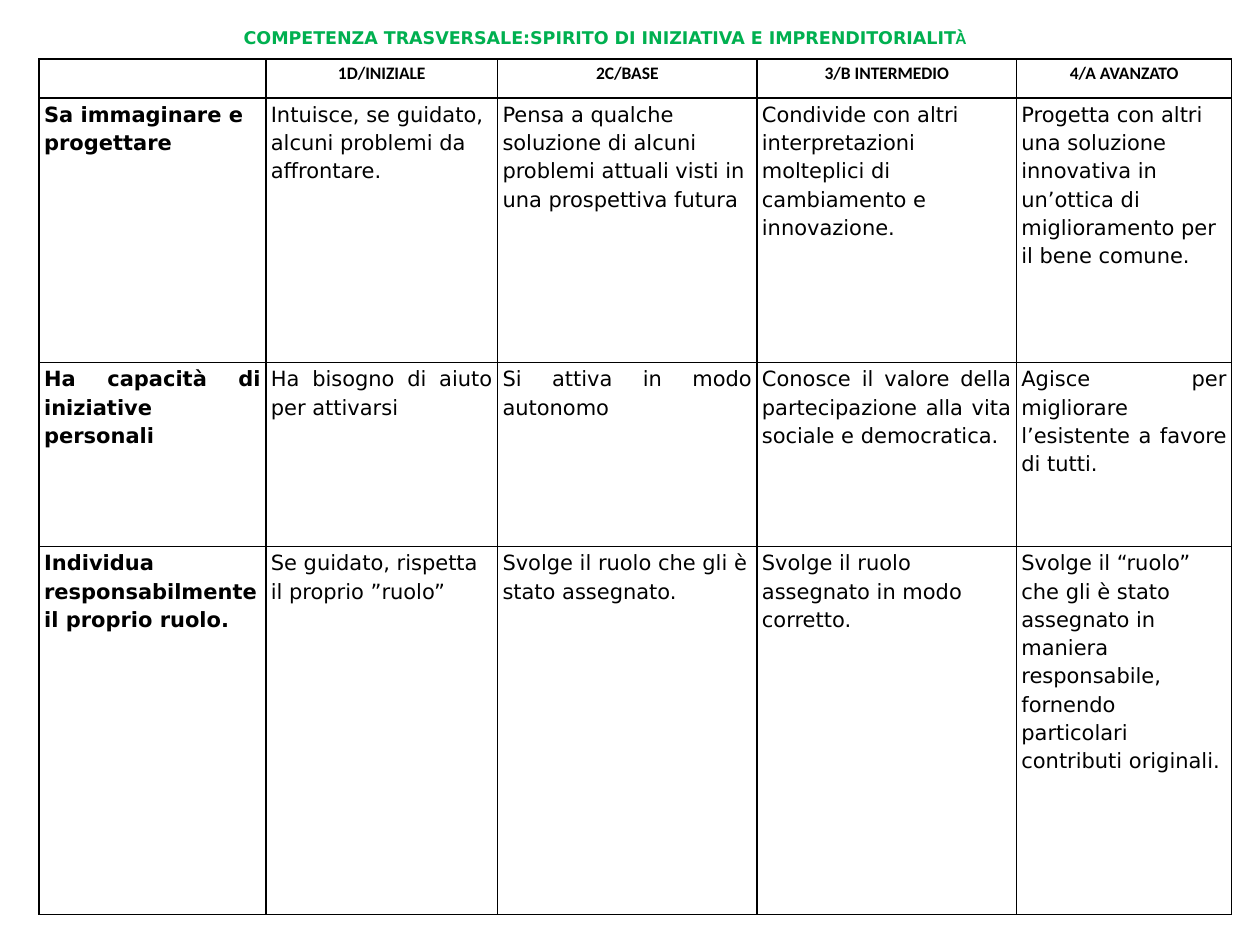
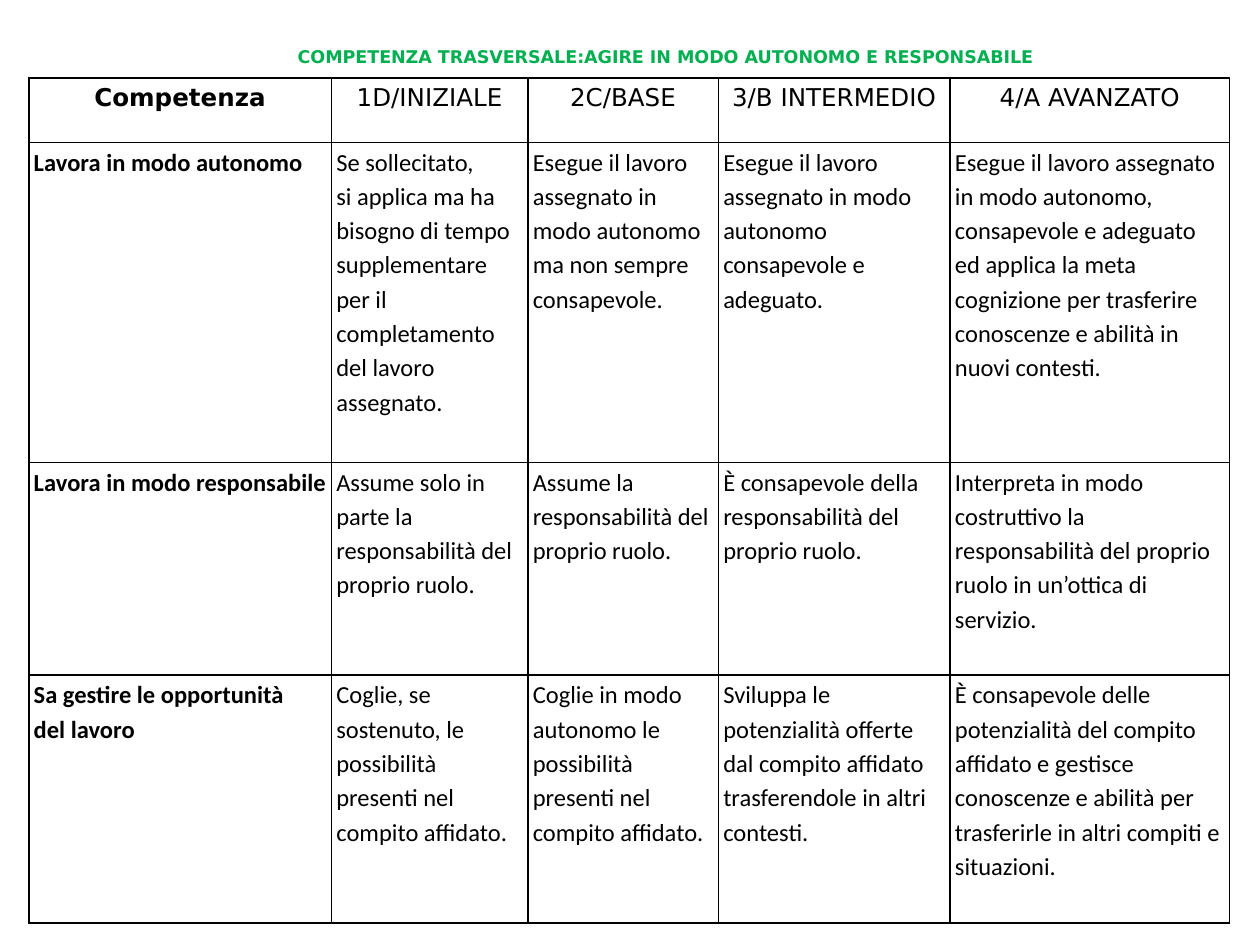
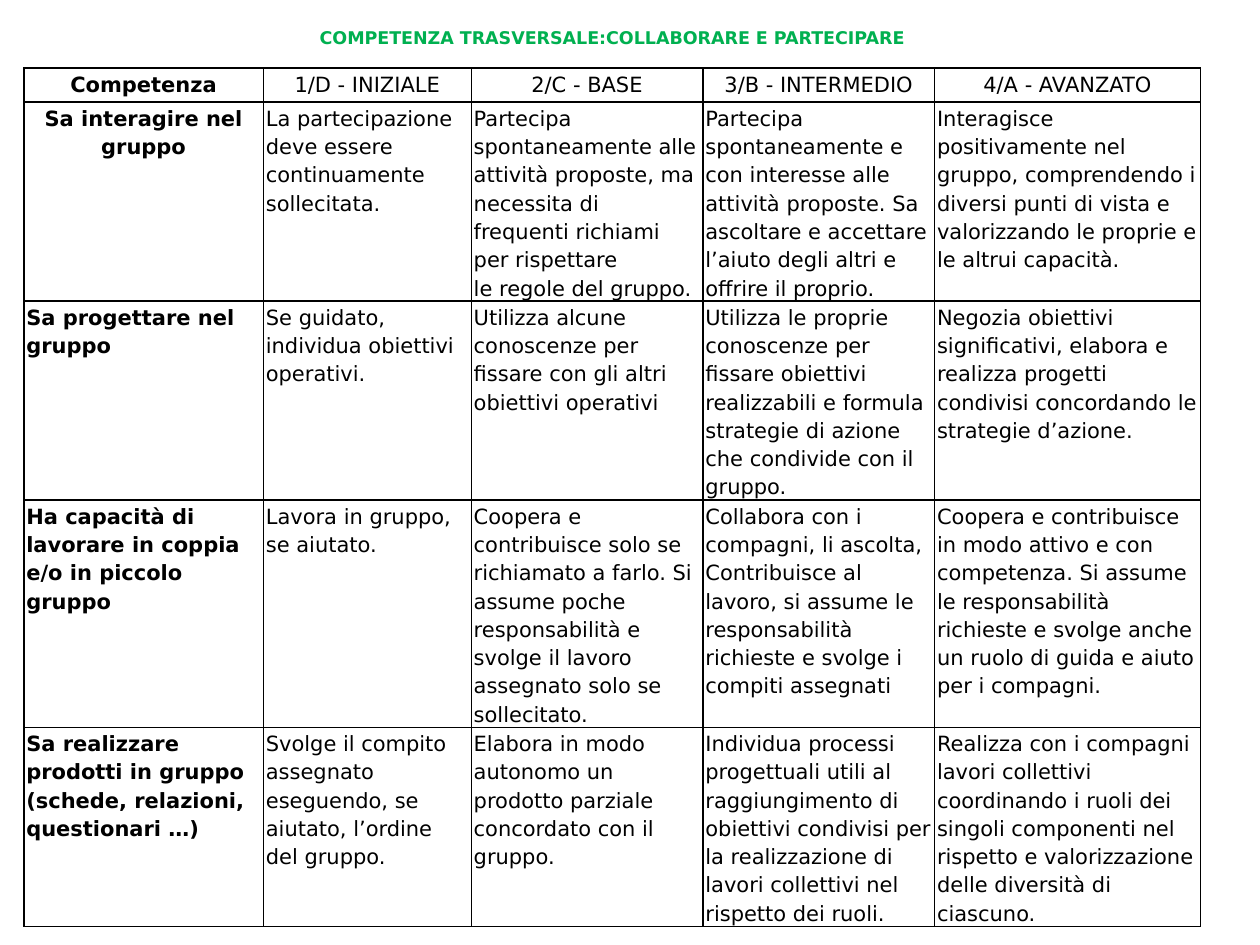
from dataclasses import dataclass, field

from lxml.etree import SubElement
from pptx import Presentation
from pptx.dml.color import RGBColor
from pptx.enum.text import MSO_ANCHOR, MSO_AUTO_SIZE, PP_ALIGN
from pptx.oxml import parse_xml
from pptx.oxml.ns import nsdecls, qn
from pptx.slide import Slide
from pptx.table import _Cell
from pptx.text.text import Font
from pptx.util import Cm, Pt

BLACK = "000000"
GREEN = "00B050"
SANS = "DejaVu Sans"
CALIBRI = "Calibri"
TITLE_PREFIX = "COMPETENZA TRASVERSALE:"
BORDER_SIDES = ("lnL", "lnR", "lnT", "lnB")
TITLE_ONLY = 5


@dataclass(frozen=True)
class TextStyle:
    name: str
    size: int
    bold: bool = False


TITLE_STYLE = TextStyle(SANS, 10, True)
TITLE_END_STYLE = TextStyle(CALIBRI, 10, True)


@dataclass(frozen=True)
class Rubric:
    """A competence grid; lengths are in centimetres, alignments keyed by (row, column)."""

    title: str
    title_box: tuple[float, float, float, float]
    corner: tuple[float, float]
    widths: tuple[float, ...]
    heights: tuple[float, ...]
    side_margin: float
    header: TextStyle
    body: TextStyle
    rows: tuple[tuple[str, ...], ...]
    title_end: str = ""
    alignments: dict[tuple[int, int], PP_ALIGN] = field(default_factory=dict)


INITIATIVE = Rubric(
    title="SPIRITO DI INIZIATIVA E IMPRENDITORIALIT",
    title_end="À",
    title_box=(1.78, 0.41, 20.83, 1.45),
    corner=(0.79, 1.19),
    widths=(4.57, 4.67, 5.23, 5.23, 4.34),
    heights=(0.79, 5.33, 3.71, 7.42),
    side_margin=0.1,
    header=TextStyle(CALIBRI, 10, True),
    body=TextStyle(SANS, 12),
    alignments={(2, column): PP_ALIGN.JUSTIFY for column in range(5)},
    rows=(
        ("", "1D/INIZIALE", "2C/BASE", "3/B INTERMEDIO", "4/A AVANZATO"),
        (
            "Sa immaginare e progettare",
            "Intuisce, se guidato, alcuni problemi da affrontare.",
            "Pensa a qualche soluzione di alcuni problemi attuali visti in una prospettiva futura",
            "Condivide con altri interpretazioni molteplici di cambiamento e innovazione.",
            "Progetta con altri una soluzione innovativa in un’ottica di miglioramento per il bene comune.",
        ),
        (
            "Ha capacità di iniziative personali",
            "Ha bisogno di aiuto per attivarsi",
            "Si attiva in modo autonomo",
            "Conosce il valore della partecipazione alla vita sociale e democratica.",
            "Agisce per migliorare l’esistente a favore di tutti.",
        ),
        (
            "Individua responsabilmente il proprio ruolo.",
            "Se guidato, rispetta il proprio ”ruolo”",
            "Svolge il ruolo che gli è stato assegnato.",
            "Svolge il ruolo assegnato in modo corretto.",
            "Svolge il “ruolo” che gli è stato assegnato in maniera responsabile, "
            "fornendo particolari contributi originali.",
        ),
    ),
)

AUTONOMY = Rubric(
    title="AGIRE IN MODO AUTONOMO E RESPONSABILE",
    title_box=(5.56, 0.79, 15.7, 0.69),
    corner=(0.58, 1.57),
    widths=(6.1, 3.96, 3.84, 4.67, 5.64),
    heights=(1.3, 6.45, 4.29, 5.0),
    side_margin=0.1,
    header=TextStyle(SANS, 14),
    body=TextStyle(CALIBRI, 14),
    rows=(
        ("Competenza", "1D/INIZIALE", "2C/BASE", "3/B INTERMEDIO", "4/A AVANZATO"),
        (
            "Lavora in modo autonomo",
            "Se sollecitato,\nsi applica ma ha bisogno di tempo supplementare "
            "per il completamento del lavoro assegnato.",
            "Esegue il lavoro assegnato in modo autonomo ma non sempre consapevole.",
            "Esegue il lavoro assegnato in modo autonomo consapevole e adeguato.",
            "Esegue il lavoro assegnato in modo autonomo, consapevole e adeguato ed applica "
            "la meta cognizione per trasferire conoscenze e abilità in nuovi contesti.",
        ),
        (
            "Lavora in modo responsabile",
            "Assume solo in parte la responsabilità del proprio ruolo.",
            "Assume la responsabilità del proprio ruolo.",
            "È consapevole della responsabilità del proprio ruolo.",
            "Interpreta in modo costruttivo la responsabilità del proprio ruolo in un’ottica di servizio.",
        ),
        (
            "Sa gestire le opportunità\ndel lavoro",
            "Coglie, se sostenuto, le possibilità presenti nel compito affidato.",
            "Coglie in modo autonomo le possibilità presenti nel compito affidato.",
            "Sviluppa le potenzialità offerte dal compito affidato\ntrasferendole in altri contesti.",
            "È consapevole delle potenzialità del compito affidato e gestisce conoscenze "
            "e abilità per trasferirle in altri compiti e situazioni.",
        ),
    ),
)

COLLABORATION = Rubric(
    title="COLLABORARE E PARTECIPARE",
    title_box=(2.77, 0.41, 19.13, 1.45),
    corner=(0.48, 1.37),
    widths=(4.83, 4.19, 4.67, 4.67, 5.36),
    heights=(0.69, 3.94, 3.94, 4.5, 3.99),
    side_margin=0.05,
    header=TextStyle(SANS, 12),
    body=TextStyle(SANS, 12),
    alignments={(1, 0): PP_ALIGN.CENTER},
    rows=(
        ("Competenza", "1/D - INIZIALE", "2/C - BASE", "3/B - INTERMEDIO", "4/A - AVANZATO"),
        (
            "Sa interagire nel gruppo",
            "La partecipazione deve essere continuamente sollecitata.",
            "Partecipa\nspontaneamente alle attività proposte, ma necessita di frequenti "
            "richiami per rispettare\nle regole del gruppo.",
            "Partecipa spontaneamente e con interesse alle attività proposte. "
            "Sa ascoltare e accettare l’aiuto degli altri e offrire il proprio.",
            "Interagisce positivamente nel gruppo, comprendendo i diversi punti di vista "
            "e valorizzando le proprie e le altrui capacità.",
        ),
        (
            "Sa progettare nel gruppo",
            "Se guidato,\nindividua obiettivi operativi.",
            "Utilizza alcune conoscenze per fissare con gli altri obiettivi operativi",
            "Utilizza le proprie conoscenze per fissare obiettivi realizzabili e formula "
            "strategie di azione che condivide con il gruppo.",
            "Negozia obiettivi significativi, elabora e realizza progetti condivisi "
            "concordando le strategie d’azione.",
        ),
        (
            "Ha capacità di lavorare in coppia e/o in piccolo gruppo",
            "Lavora in gruppo,\nse aiutato.",
            "Coopera e contribuisce solo se richiamato a farlo. Si assume poche responsabilità "
            "e svolge il lavoro assegnato solo se sollecitato.",
            "Collabora con i compagni, li ascolta, Contribuisce al lavoro, si assume "
            "le responsabilità richieste e svolge i compiti assegnati",
            "Coopera e contribuisce in modo attivo e con competenza. Si assume le responsabilità "
            "richieste e svolge anche un ruolo di guida e aiuto per i compagni.",
        ),
        (
            "Sa realizzare prodotti in gruppo (schede, relazioni, questionari …)",
            "Svolge il compito assegnato eseguendo, se aiutato, l’ordine del gruppo.",
            "Elabora in modo autonomo un prodotto parziale concordato con il gruppo.",
            "Individua processi progettuali utili al raggiungimento di obiettivi condivisi "
            "per la realizzazione di lavori collettivi nel rispetto dei ruoli.",
            "Realizza con i compagni lavori collettivi coordinando i ruoli dei singoli componenti "
            "nel rispetto e valorizzazione delle diversità di ciascuno.",
        ),
    ),
)


def style_font(font: Font, style: TextStyle, color: str, bold: bool) -> None:
    font.name = style.name
    font.size = Pt(style.size)
    font.bold = bold
    font.color.rgb = RGBColor.from_string(color)


def add_title(slide: Slide, rubric: Rubric) -> None:
    title = slide.shapes.title
    title.left, title.top, title.width, title.height = map(Cm, rubric.title_box)
    frame = title.text_frame
    frame.auto_size = MSO_AUTO_SIZE.NONE
    frame.vertical_anchor = MSO_ANCHOR.TOP
    frame.word_wrap = True
    frame.text = TITLE_PREFIX + rubric.title
    para = frame.paragraphs[0]
    para.alignment = PP_ALIGN.CENTER
    style_font(para.runs[0].font, TITLE_STYLE, GREEN, TITLE_STYLE.bold)
    if rubric.title_end:
        span = para.add_run()
        span.text = rubric.title_end
        style_font(span.font, TITLE_END_STYLE, GREEN, TITLE_END_STYLE.bold)


def frame_cell(cell: _Cell, side_margin: float) -> None:
    """Give the cell black borders, no fill and narrow margins."""
    cell.margin_left = cell.margin_right = Cm(side_margin)
    cell.margin_top, cell.margin_bottom = Cm(0.02), Cm(0)
    properties = cell._tc.get_or_add_tcPr()
    for side in BORDER_SIDES:
        properties.append(parse_xml(
            f'<a:{side} {nsdecls("a")} w="{Pt(1)}"><a:solidFill>'
            f'<a:srgbClr val="{BLACK}"/></a:solidFill></a:{side}>'
        ))
    cell.fill.background()


def write_cell(cell: _Cell, text: str, style: TextStyle, bold: bool, alignment: PP_ALIGN) -> None:
    cell.text_frame.text = text
    for para in cell.text_frame.paragraphs:
        para.alignment = alignment
        para.line_spacing = 1.15
        for span in para.runs:
            style_font(span.font, style, BLACK, bold)
        if not para.runs:
            SubElement(para._p, qn("a:endParaRPr"), sz=str(style.size * 100))


def add_grid(slide: Slide, rubric: Rubric) -> None:
    left, top = map(Cm, rubric.corner)
    table = slide.shapes.add_table(
        len(rubric.heights), len(rubric.widths), left, top,
        Cm(sum(rubric.widths)), Cm(sum(rubric.heights)),
    ).table
    table.first_row = table.horz_banding = False
    for column, width in zip(table.columns, rubric.widths):
        column.width = Cm(width)
    for row, height in zip(table.rows, rubric.heights):
        row.height = Cm(height)
    for row_index, texts in enumerate(rubric.rows):
        is_header = row_index == 0
        style = rubric.header if is_header else rubric.body
        default = PP_ALIGN.CENTER if is_header else PP_ALIGN.LEFT
        for column_index, text in enumerate(texts):
            cell = table.cell(row_index, column_index)
            alignment = rubric.alignments.get((row_index, column_index), default)
            frame_cell(cell, rubric.side_margin)
            write_cell(cell, text, style, style.bold or column_index == 0, alignment)


def main() -> None:
    deck = Presentation()
    deck.slide_width, deck.slide_height = Cm(25.4), Cm(19.05)
    for rubric in (INITIATIVE, AUTONOMY, COLLABORATION):
        slide = deck.slides.add_slide(deck.slide_layouts[TITLE_ONLY])
        add_title(slide, rubric)
        add_grid(slide, rubric)
    deck.save("out.pptx")


if __name__ == "__main__":
    main()
